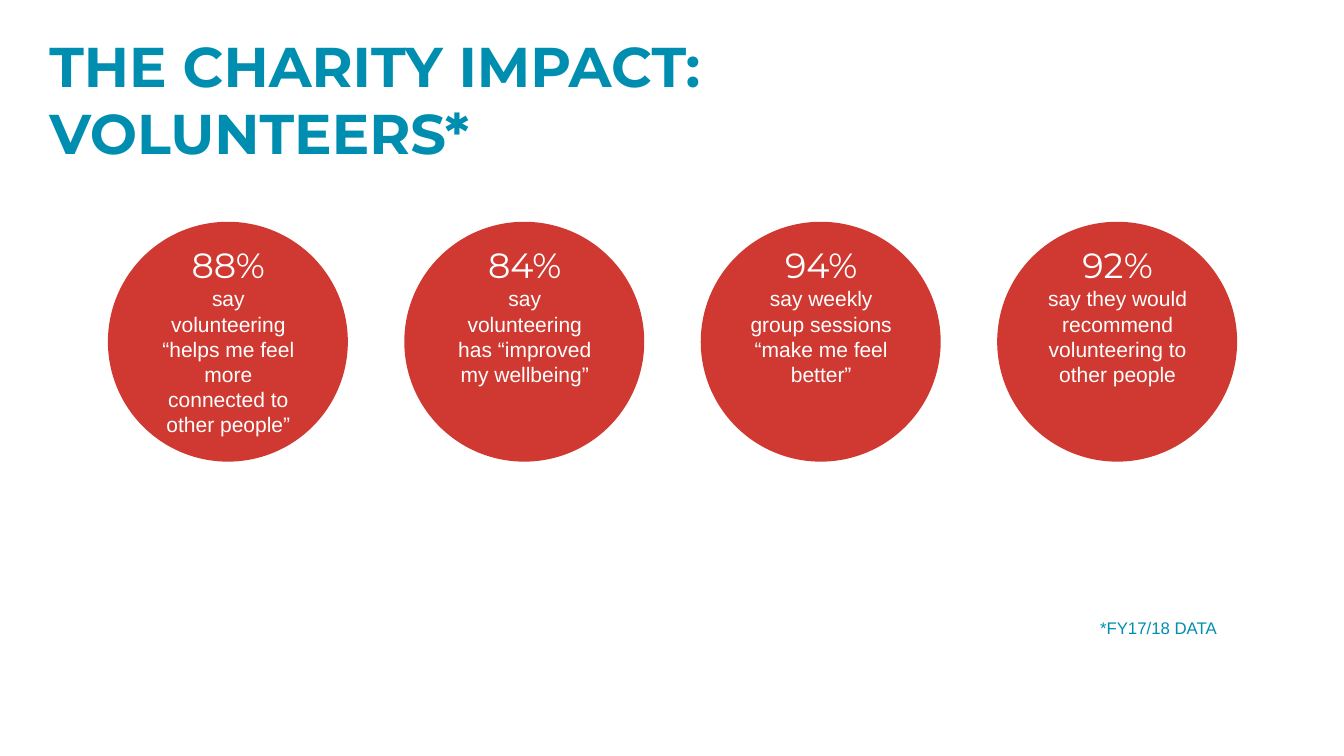
from dataclasses import dataclass

from pptx import Presentation
from pptx.dml.color import RGBColor
from pptx.enum.shapes import MSO_SHAPE
from pptx.enum.text import MSO_ANCHOR, MSO_AUTO_SIZE, PP_ALIGN
from pptx.slide import Slide
from pptx.util import Inches, Pt

BLUE, RED, WHITE = "008EB0", "D03931", "FFFFFF"
HEAD, BODY = "Montserrat", "Arial"
LEFT, TOP, SIZE, STEP = 1.07, 2.2, 2.38, 2.94
INSET, DROP = 0.38, 0.17


@dataclass
class Stat:
    """One figure, its claim and the height of their text box."""

    figure: str
    claim: str
    height: float


STATS = [
    Stat("88%", "say volunteering “helps me feel more connected to other people”", 2.04),
    Stat("84%", "say volunteering has “improved my wellbeing”", 1.53),
    Stat("94%", "say weekly group sessions “make me feel better”", 1.78),
    Stat("92%", "say they would recommend volunteering to other people", 1.53),
]


def color(code: str) -> RGBColor:
    """Turn a hex string into a colour."""
    return RGBColor.from_string(code)


def place(shape, left: float, top: float, width: float, height: float) -> None:
    """Set the position and size of a shape in inches."""
    shape.left, shape.top = Inches(left), Inches(top)
    shape.width, shape.height = Inches(width), Inches(height)


def setup(frame, fit: MSO_AUTO_SIZE) -> None:
    """Make a text frame wrap, start at the top and fit as asked."""
    frame.word_wrap = True
    frame.auto_size = fit
    frame.vertical_anchor = MSO_ANCHOR.TOP


def write(para, text: str, font: str, size: int, code: str,
          align: PP_ALIGN, bold: bool = False) -> None:
    """Add one formatted run to a paragraph."""
    para.alignment = align
    run = para.add_run()
    run.text = text
    run.font.name = font
    run.font.size = Pt(size)
    run.font.bold = bold
    run.font.color.rgb = color(code)


def add_title(slide: Slide) -> None:
    """Place and fill the title."""
    title = slide.shapes.title
    place(title, 0.39, 0.26, 7.83, 1.45)
    frame = title.text_frame
    setup(frame, MSO_AUTO_SIZE.SHAPE_TO_FIT_TEXT)
    write(frame.paragraphs[0], "THE CHARITY IMPACT: VOLUNTEERS*",
          HEAD, 40, BLUE, PP_ALIGN.LEFT, True)


def add_note(slide: Slide) -> None:
    """Add the footnote at the lower right."""
    box = slide.shapes.add_textbox(Inches(0.67), Inches(6.1), Inches(11.5), Inches(0.46))
    setup(box.text_frame, MSO_AUTO_SIZE.NONE)
    para = box.text_frame.paragraphs[0]
    para.line_spacing = 0.9
    write(para, "*FY17/18 DATA", BODY, 12, BLUE, PP_ALIGN.RIGHT)


def add_stat(slide: Slide, stat: Stat, left: float) -> None:
    """Add a circle grouped with its figure and claim."""
    group = slide.shapes.add_group_shape()
    disc = group.shapes.add_shape(MSO_SHAPE.OVAL, Inches(left), Inches(TOP),
                                  Inches(SIZE), Inches(SIZE))
    disc.shadow.inherit = False
    disc.fill.solid()
    disc.fill.fore_color.rgb = color(RED)
    disc.line.fill.background()
    box = group.shapes.add_textbox(Inches(left + INSET), Inches(TOP + DROP),
                                   Inches(SIZE - 2 * INSET + 0.01), Inches(stat.height))
    frame = box.text_frame
    setup(frame, MSO_AUTO_SIZE.SHAPE_TO_FIT_TEXT)
    write(frame.paragraphs[0], stat.figure, HEAD, 25, WHITE, PP_ALIGN.CENTER)
    write(frame.add_paragraph(), stat.claim, BODY, 15, WHITE, PP_ALIGN.CENTER)


def main() -> None:
    """Build and save the slide."""
    deck = Presentation()
    deck.slide_width, deck.slide_height = Inches(13.33), Inches(7.5)
    slide = deck.slides.add_slide(deck.slide_layouts.get_by_name("Title Only"))
    add_title(slide)
    add_note(slide)
    for index, stat in enumerate(STATS):
        add_stat(slide, stat, LEFT + index * STEP)
    deck.save("out.pptx")


if __name__ == "__main__":
    main()
